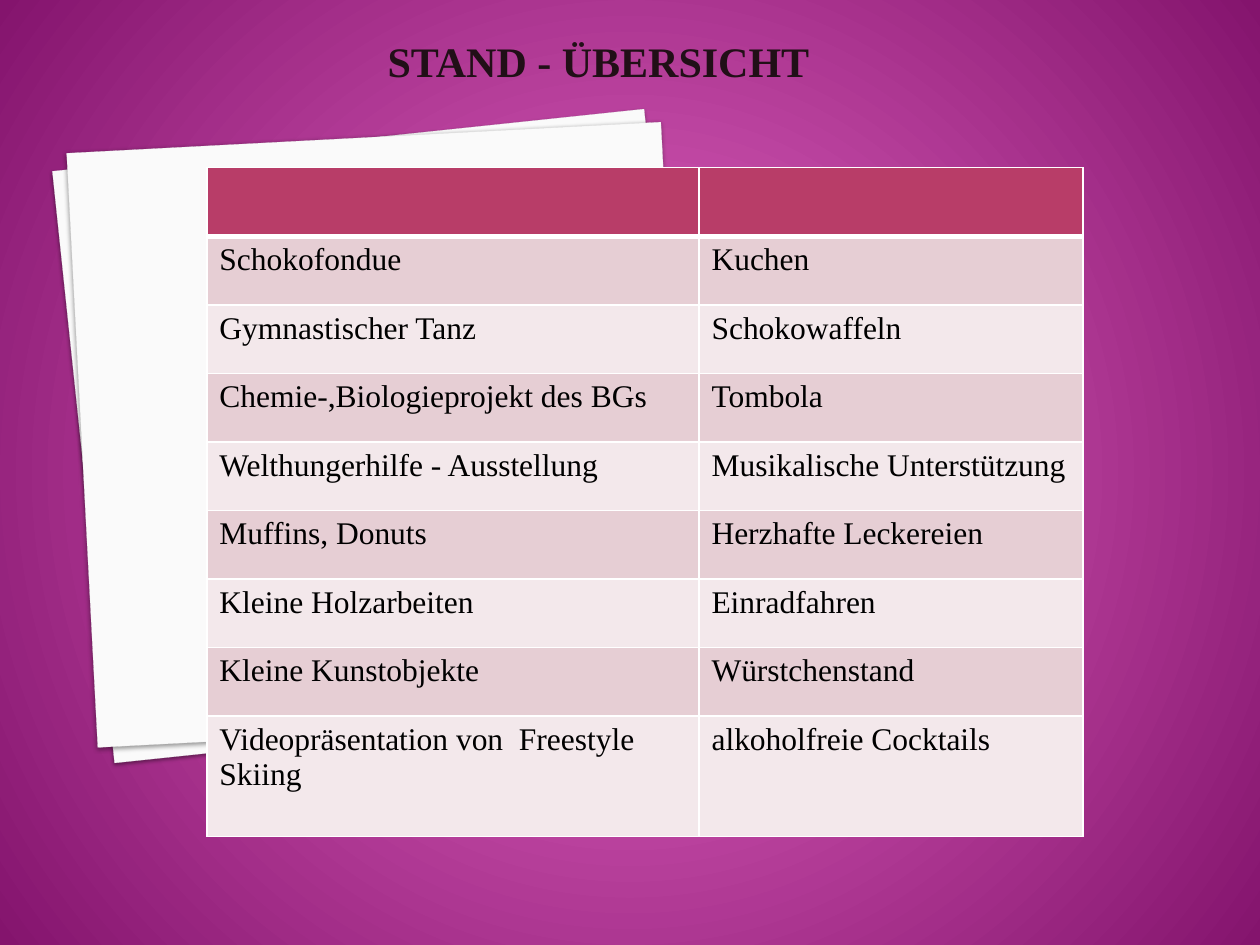
from dataclasses import dataclass

import pptx
import pptx.dml.color
import pptx.enum.shapes
import pptx.enum.text
import pptx.oxml
import pptx.oxml.ns
import pptx.util
from lxml import etree

Pt = pptx.util.Pt
RGBColor = pptx.dml.color.RGBColor
qn = pptx.oxml.ns.qn

GLOW = RGBColor(0xE8, 0x69, 0xC7)
PURPLE = RGBColor(0x84, 0x14, 0x6D)
PAPER = RGBColor(0xFA, 0xFA, 0xFA)
PAPER_EDGE = RGBColor(0xEA, 0xEA, 0xEA)
TITLE_COLOR = RGBColor(0x21, 0x0F, 0x17)
HEADER_FILL = RGBColor(0xB8, 0x3D, 0x68)
BAND_FILLS = (RGBColor(0xE6, 0xCE, 0xD4), RGBColor(0xF3, 0xE8, 0xEB))
WHITE = RGBColor(0xFF, 0xFF, 0xFF)
BLACK = RGBColor(0, 0, 0)
FONT = "Times New Roman"

COLUMN_WIDTHS = (281.2, 219.4)
ROW_HEIGHT = 39.2
LAST_ROW_HEIGHT = 68.7


@dataclass(frozen=True)
class Sheet:
    top: float
    rotation: float
    blur: float


@dataclass(frozen=True)
class StandRow:
    left: str
    right: str


SHEETS = (Sheet(79.2, -6, 2), Sheet(78.5, -3, 2.2))
STANDS = (
    StandRow("Schokofondue", "Kuchen"),
    StandRow("Gymnastischer Tanz", "Schokowaffeln"),
    StandRow("Chemie-,Biologieprojekt des BGs", "Tombola"),
    StandRow("Welthungerhilfe - Ausstellung", "Musikalische Unterstützung"),
    StandRow("Muffins, Donuts", "Herzhafte Leckereien"),
    StandRow("Kleine Holzarbeiten", "Einradfahren"),
    StandRow("Kleine Kunstobjekte", "Würstchenstand"),
    StandRow("Videopräsentation von  Freestyle  Skiing", "alkoholfreie Cocktails"),
)


def set_radial_background(slide) -> None:
    fill = slide.background.fill
    fill.gradient()
    for stop, color, position in zip(fill.gradient_stops, (GLOW, PURPLE), (0, 1)):
        stop.color.rgb = color
        stop.position = position
    linear = slide.element.find(".//" + qn("a:lin"))
    circle = etree.Element(qn("a:path"), path="circle")
    etree.SubElement(circle, qn("a:fillToRect"), l="50000", t="50000", r="50000", b="50000")
    linear.getparent().replace(linear, circle)


def add_sheet(slide, sheet: Sheet) -> None:
    shape = slide.shapes.add_shape(
        pptx.enum.shapes.MSO_SHAPE.RECTANGLE, Pt(46.8), Pt(sheet.top), Pt(340), Pt(340))
    shape.rotation = sheet.rotation
    shape.fill.solid()
    shape.fill.fore_color.rgb = PAPER
    shape.line.color.rgb = PAPER_EDGE
    shape.line.width = Pt(0.1)
    shape.shadow.inherit = False
    effects = shape.element.spPr.find(qn("a:effectLst"))
    shadow = etree.SubElement(
        effects, qn("a:outerShdw"), blurRad=str(Pt(sheet.blur)), dist=str(Pt(1)),
        dir="5400000", algn="tl", rotWithShape="0")
    color = etree.SubElement(shadow, qn("a:srgbClr"), val=str(BLACK))
    etree.SubElement(color, qn("a:alpha"), val="40000")


def set_title(slide) -> None:
    title = slide.shapes.title
    title.left, title.top, title.width, title.height = Pt(144), Pt(16.6), Pt(396), Pt(36)
    frame = title.text_frame
    frame.text = "STAND - ÜBERSICHT"
    frame.vertical_anchor = pptx.enum.text.MSO_ANCHOR.MIDDLE
    paragraph = frame.paragraphs[0]
    paragraph.alignment = pptx.enum.text.PP_ALIGN.CENTER
    font = paragraph.runs[0].font
    font.name, font.size, font.bold = FONT, Pt(24), True
    font.color.rgb = TITLE_COLOR


def format_cell(cell, text: str, fill_color: RGBColor, bottom_width: float) -> None:
    properties = cell._tc.get_or_add_tcPr()
    for side, width in (("L", 1), ("R", 1), ("T", 1), ("B", bottom_width)):
        line = etree.SubElement(properties, qn(f"a:ln{side}"), w=str(Pt(width)))
        line_fill = etree.SubElement(line, qn("a:solidFill"))
        etree.SubElement(line_fill, qn("a:srgbClr"), val=str(WHITE))
    cell.fill.solid()
    cell.fill.fore_color.rgb = fill_color
    cell.text_frame.text = text
    font = cell.text_frame.paragraphs[0].font
    font.name, font.size = FONT, Pt(18)
    for run in cell.text_frame.paragraphs[0].runs:
        run.font.name, run.font.size, run.font.bold = FONT, Pt(18), False
        run.font.color.rgb = BLACK


def add_stand_table(slide) -> None:
    rows = (StandRow("", ""),) + STANDS
    heights = [ROW_HEIGHT] * len(STANDS) + [LAST_ROW_HEIGHT]
    table = slide.shapes.add_table(
        len(rows), len(COLUMN_WIDTHS), Pt(118.2), Pt(95.8),
        Pt(sum(COLUMN_WIDTHS)), Pt(sum(heights))).table
    for column, width in zip(table.columns, COLUMN_WIDTHS):
        column.width = Pt(width)
    for index, (row, height, stand) in enumerate(zip(table.rows, heights, rows)):
        row.height = Pt(height)
        is_header = index == 0
        fill_color = HEADER_FILL if is_header else BAND_FILLS[(index - 1) % 2]
        for cell, text in zip(row.cells, (stand.left, stand.right)):
            format_cell(cell, text, fill_color, 3 if is_header else 1)


def main() -> None:
    presentation = pptx.Presentation()
    presentation.slide_width, presentation.slide_height = Pt(720), Pt(540)
    slide = presentation.slides.add_slide(presentation.slide_layouts[5])
    set_radial_background(slide)
    for sheet in SHEETS:
        add_sheet(slide, sheet)
    set_title(slide)
    add_stand_table(slide)
    presentation.save("out.pptx")


if __name__ == "__main__":
    main()
